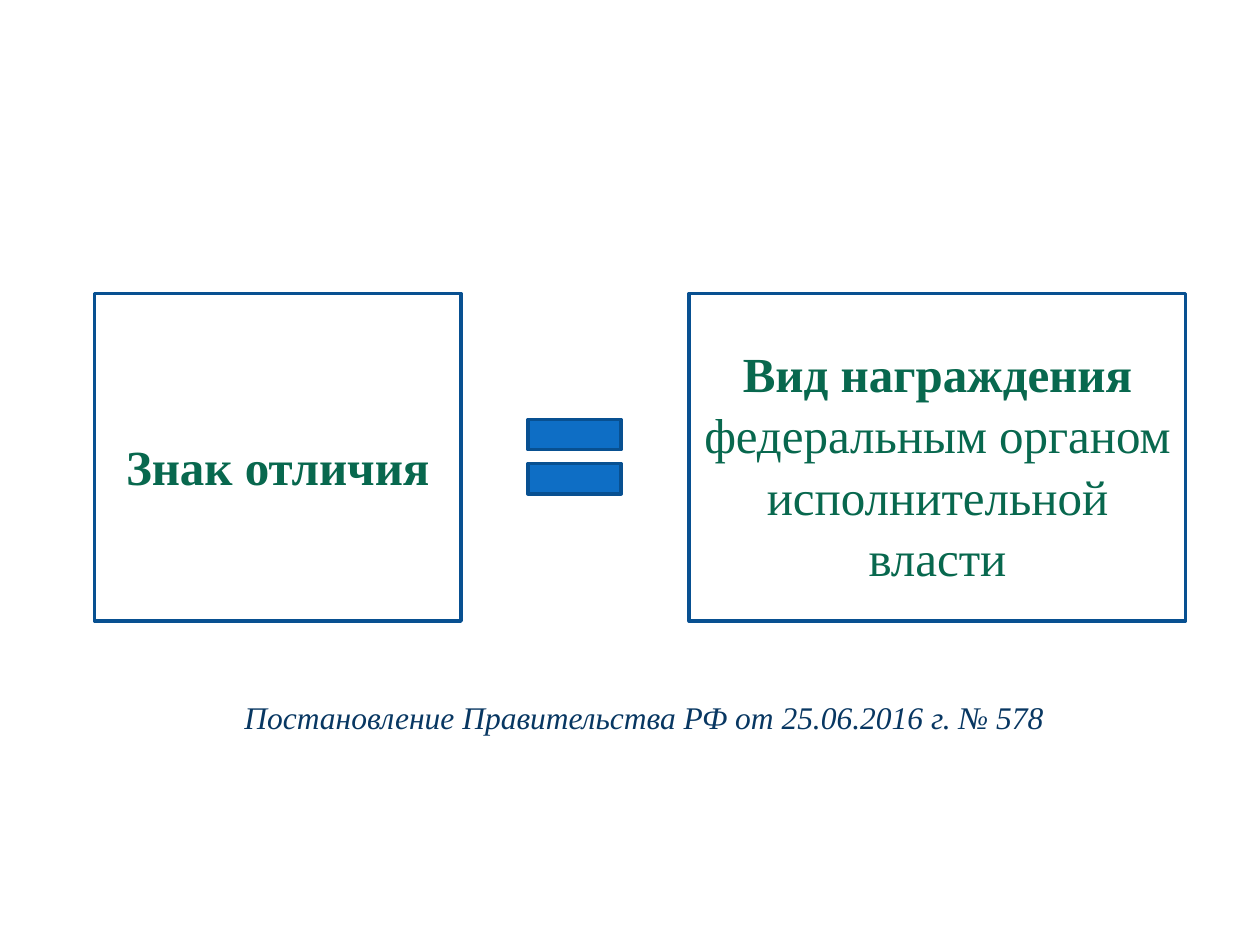
from pptx import Presentation
from pptx.dml.color import RGBColor
from pptx.enum.shapes import MSO_SHAPE
from pptx.enum.text import MSO_ANCHOR, PP_ALIGN
from pptx.util import Inches, Pt

RECT = MSO_SHAPE.RECTANGLE
TOP, MIDDLE = MSO_ANCHOR.TOP, MSO_ANCHOR.MIDDLE
LEFT, CENTER = PP_ALIGN.LEFT, PP_ALIGN.CENTER
BLUE, EDGE, GREEN, NAVY = "0E6EC5", "085091", "08684E", "083762"


def rgb(code):
    return RGBColor.from_string(code)


def write(shape, lines, anchor, inset, align, indent, look):
    frame = shape.text_frame
    format = {"word_wrap": True, "vertical_anchor": anchor,
              "margin_left": Inches(indent), "margin_right": 0,
              "margin_top": Inches(inset), "margin_bottom": 0}
    for name, value in format.items():
        setattr(frame, name, value)
    for i, (text, bold) in enumerate(lines):
        para = frame.paragraphs[0] if i == 0 else frame.add_paragraph()
        para.alignment = align
        if len(lines) > 1:
            para.line_spacing = 1.04
        run = para.add_run()
        run.text = text
        run.font.color.rgb = rgb(look["color"])
        font = {"name": "Times New Roman", "size": Pt(look["size"]),
                "bold": bold, "italic": look["italic"]}
        for name, value in font.items():
            setattr(run.font, name, value)


deck = Presentation()
deck.slide_width, deck.slide_height = Inches(10), Inches(7.5)
slide = deck.slides.add_slide(deck.slide_layouts[6])

# Equals sign from two bars, then the two framed boxes
rects = []
for x, y, w, h, fill in [
    (4.19, 3.33, 0.74, 0.24, BLUE),
    (4.19, 3.68, 0.74, 0.24, BLUE),
    (0.75, 2.33, 2.91, 2.6, None),
    (5.47, 2.33, 3.94, 2.6, None),
]:
    rect = slide.shapes.add_shape(RECT, Inches(x), Inches(y), Inches(w), Inches(h))
    rect.shadow.inherit = False
    if fill:
        rect.fill.solid()
        rect.fill.fore_color.rgb = rgb(fill)
    else:
        rect.fill.background()
    rect.line.color.rgb = rgb(EDGE)
    rect.line.width = Pt(2)
    rects.append(rect)

# Box texts
term, award = rects[2:]
look = {"size": 28, "color": GREEN, "italic": False}
write(term, [("Знак отличия", True)], MIDDLE, 0.14, LEFT, 0.25, look)
write(award, [("Вид награждения", True),
              ("федеральным органом исполнительной", False),
              ("власти", False)], TOP, 0.38, CENTER, 0, look)

# Decree reference
note = slide.shapes.add_textbox(Inches(1.93), Inches(5.51), Inches(6.38), Inches(0.33))
write(note, [("Постановление Правительства РФ от 25.06.2016 г. № 578", False)],
      TOP, 0.03, LEFT, 0.01, {"size": 18, "color": NAVY, "italic": True})

deck.save("out.pptx")
